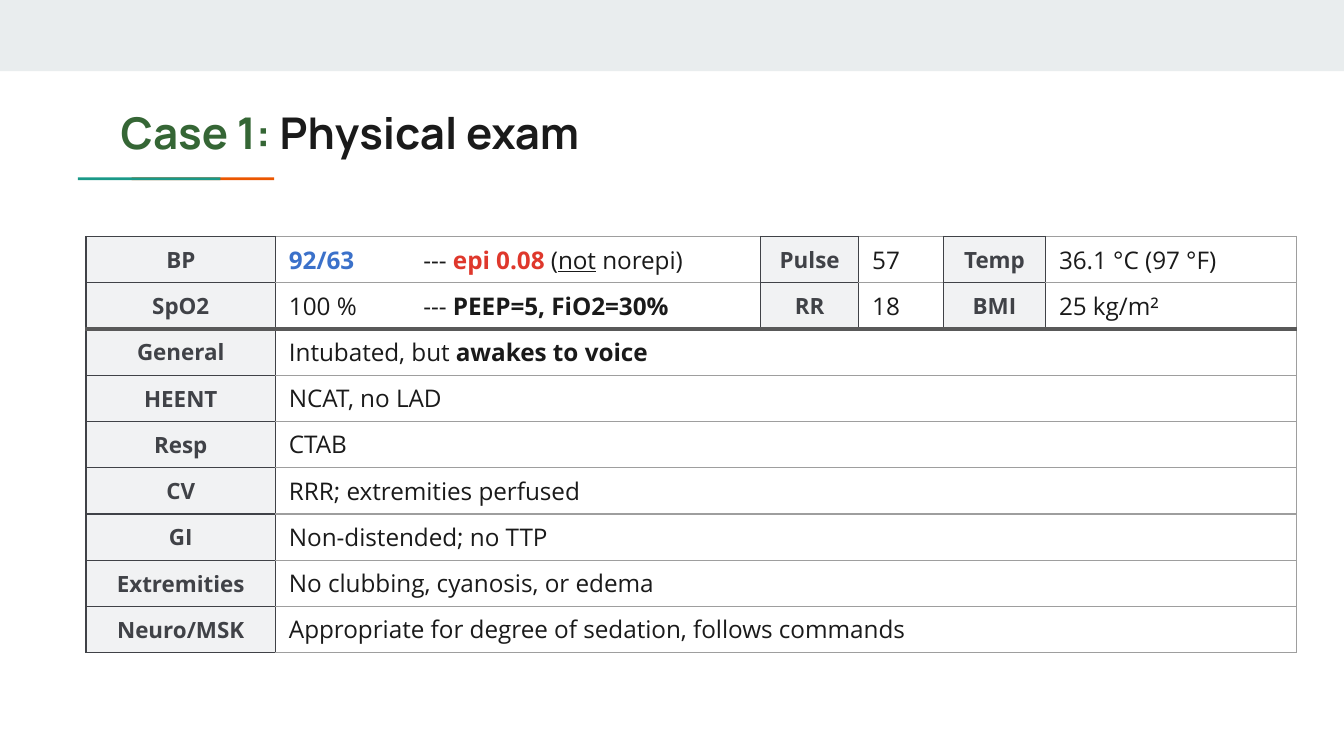
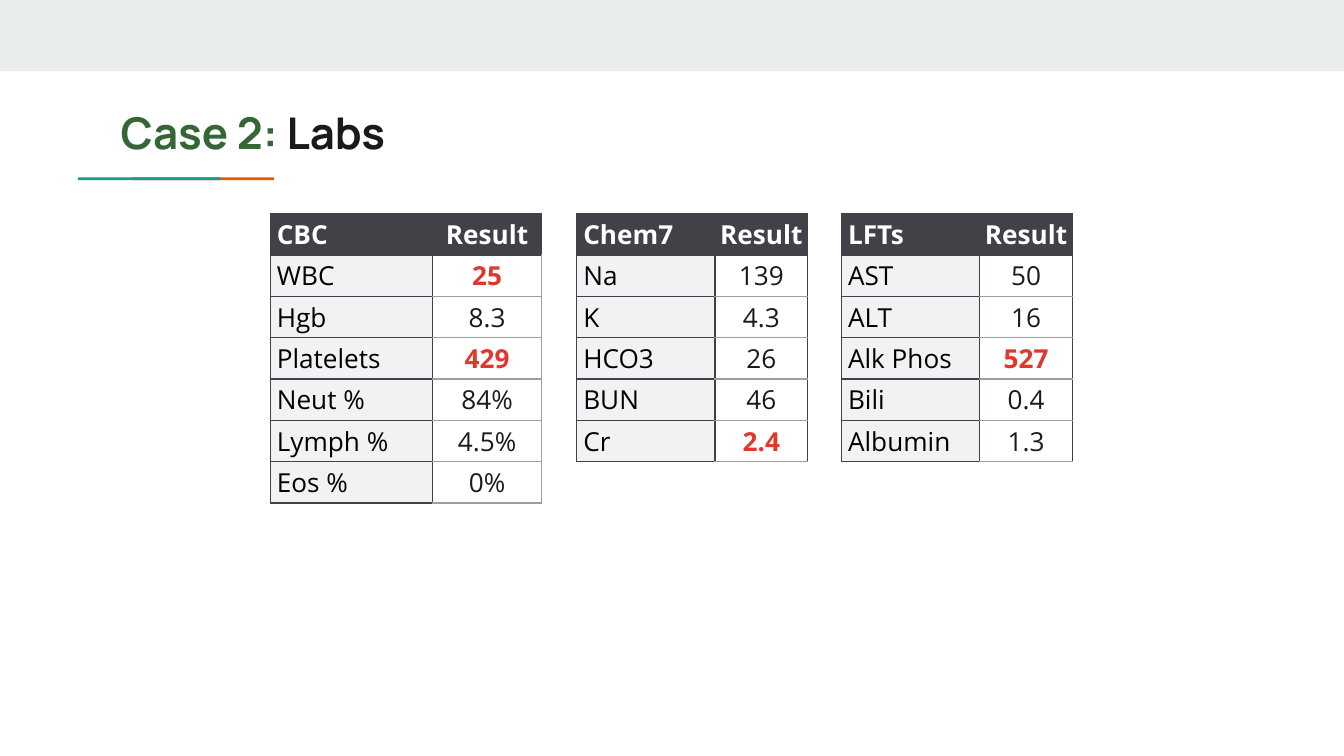
from dataclasses import dataclass

from lxml.etree import SubElement
from pptx import Presentation
from pptx.dml.color import RGBColor
from pptx.enum.shapes import MSO_SHAPE
from pptx.enum.text import MSO_ANCHOR, PP_ALIGN
from pptx.oxml.ns import qn
from pptx.util import Inches, Pt


@dataclass(frozen=True)
class Theme:
    band: str = "E9EDEE"
    orange: str = "EB5600"
    teal: str = "1A9988"
    green: str = "356635"
    ink: str = "1A1A1A"
    black: str = "000000"
    white: str = "FFFFFF"
    slate: str = "404247"
    label: str = "F1F2F3"
    grey: str = "9E9E9E"
    divider: str = "595959"
    red: str = "DF382C"
    blue: str = "3B71CA"
    heading_font: str = "Manrope"
    body_font: str = "Open Sans"
    title_size: float = 23.4
    label_size: float = 12
    exam_size: float = 13
    lab_size: float = 14
    hairline: float = 0.75
    header_rule: float = 1.5
    divider_rule: float = 2.25


THEME = Theme()
SLIDE_W = 10
SLIDE_H = SLIDE_W * 9 / 16
EXAM_ROW = Pt(24.8)
LAB_ROW = Pt(22.15)

STYLES = {
    "plain": (THEME.ink, {}),
    "bold": (THEME.ink, {"bold": True}),
    "underline": (THEME.ink, {"underline": True}),
    "low": (THEME.blue, {"bold": True}),
    "alert": (THEME.red, {"bold": True}),
    "label": (THEME.slate, {"bold": True}),
    "header": (THEME.white, {"bold": True}),
    "analyte": (THEME.black, {}),
    "case": (THEME.green, {"bold": True}),
}

EXAM_COLUMNS = (1.41, 3.61, 0.73, 0.63, 0.76, 1.87)
VITALS = [
    ("BP", [("92/63 ", "low"), ("\t--- ", "plain"), ("epi 0.08", "alert"),
            (" (", "plain"), ("not", "underline"), (" norepi)", "plain")],
     "Pulse", "57", "Temp", "36.1 °C (97 °F)"),
    ("SpO2", [("100 % \t--- ", "plain"), ("PEEP=5, FiO2=30%", "bold")],
     "RR", "18", "BMI", "25 kg/m²"),
]
FINDINGS = [
    ("General", [("Intubated, but ", "plain"), ("awakes to voice", "bold")]),
    ("HEENT", "NCAT, no LAD"),
    ("Resp", "CTAB"),
    ("CV", "RRR; extremities perfused"),
    ("GI", "Non-distended; no TTP"),
    ("Extremities", "No clubbing, cyanosis, or edema"),
    ("Neuro/MSK", "Appropriate for degree of sedation, follows commands"),
]

LAB_PANELS = [
    {"name": "CBC", "left": 2.01, "columns": (1.21, 0.81), "edge": THEME.grey,
     "abnormal": ("WBC", "Platelets"),
     "results": [("WBC", "25"), ("Hgb", "8.3"), ("Platelets", "429"),
                 ("Neut %", "84%"), ("Lymph %", "4.5%"), ("Eos %", "0%")]},
    {"name": "Chem7", "left": 4.29, "columns": (1.03, 0.69), "edge": THEME.slate,
     "abnormal": ("Cr",),
     "results": [("Na", "139"), ("K", "4.3"), ("HCO3", "26"),
                 ("BUN", "46"), ("Cr", "2.4")]},
    {"name": "LFTs", "left": 6.26, "columns": (1.03, 0.69), "edge": THEME.slate,
     "abnormal": ("Alk Phos",),
     "results": [("AST", "50"), ("ALT", "16"), ("Alk Phos", "527"),
                 ("Bili", "0.4"), ("Albumin", "1.3")]},
]


def apply(target, values):
    for name, value in values.items():
        setattr(target, name, value)


def write(paragraph, pieces, font, size):
    for text, style in pieces:
        run = paragraph.add_run()
        run.text = text
        color, emphasis = STYLES[style]
        apply(run.font, {"name": font, "size": Pt(size), "bold": False, **emphasis})
        run.font.color.rgb = RGBColor.from_string(color)


def add_bar(slide, left, top, width, height, color):
    bar = slide.shapes.add_shape(MSO_SHAPE.RECTANGLE, *map(Inches, (left, top, width, height)))
    bar.shadow.inherit = False
    bar.fill.solid()
    bar.fill.fore_color.rgb = RGBColor.from_string(color)
    bar.line.fill.background()


def start_slide(deck, case, topic):
    slide = deck.slides.add_slide(deck.slide_layouts[6])
    add_bar(slide, 0, 0, SLIDE_W, 0.53, THEME.band)
    for left, color in ((0.98, THEME.orange), (0.58, THEME.teal)):
        add_bar(slide, left, 1.32, 1.06, 0.02, color)
    title = slide.shapes.add_textbox(*map(Inches, (0.8, 0.69, 8.41, 0.59))).text_frame
    apply(title, {"word_wrap": True, "vertical_anchor": MSO_ANCHOR.TOP,
                  **{f"margin_{side}": Inches(0.1) for side in ("left", "top", "right", "bottom")}})
    write(title.paragraphs[0], [(case, "case"), (f" {topic}", "bold")],
          THEME.heading_font, THEME.title_size)
    return slide


def add_grid(slide, left, top, columns, row_count, row_height):
    frame = slide.shapes.add_table(row_count, len(columns), Inches(left), Inches(top),
                                   Inches(sum(columns)), row_height * row_count)
    grid = frame.table
    apply(grid, {"first_row": False, "horz_banding": False})
    for column, width in zip(grid.columns, columns):
        column.width = Inches(width)
    for row in grid.rows:
        row.height = row_height
    return grid


def dress(cell, borders, fill, margins, anchor):
    props = cell._tc.get_or_add_tcPr()
    for side, (color, width) in zip("LRTB", borders):
        line = SubElement(props, qn(f"a:ln{side}"), w=str(Pt(width)))
        SubElement(SubElement(line, qn("a:solidFill")), qn("a:srgbClr"), val=color)
    if fill:
        cell.fill.solid()
        cell.fill.fore_color.rgb = RGBColor.from_string(fill)
    else:
        cell.fill.background()
    sides = ("margin_left", "margin_top", "margin_right", "margin_bottom")
    apply(cell, {**dict(zip(sides, map(Inches, margins))), "vertical_anchor": anchor})


DARK = (THEME.slate, THEME.hairline)
LIGHT = (THEME.grey, THEME.hairline)
DIVIDER = (THEME.divider, THEME.divider_rule)
HEADER_RULE = (THEME.slate, THEME.header_rule)


def add_exam(slide):
    rows = VITALS + FINDINGS
    last = len(EXAM_COLUMNS) - 1
    grid = add_grid(slide, 0.64, 1.76, EXAM_COLUMNS, len(rows), EXAM_ROW)
    for r, entries in enumerate(rows):
        if len(entries) == 2:
            grid.cell(r, 1).merge(grid.cell(r, last))
        for c in range(last + 1):
            cell = grid.cell(r, c)
            is_label = c % 2 == 0 and c < len(entries)
            rule = DARK if is_label else LIGHT
            right = DARK if is_label or (len(entries) > 2 and c < last) else LIGHT
            borders = (DARK, right,
                       DIVIDER if r == len(VITALS) else rule,
                       DIVIDER if r == len(VITALS) - 1 else rule)
            dress(cell, borders, THEME.label if is_label else None, (0.1, 0.05, 0.1, 0.05),
                  MSO_ANCHOR.MIDDLE if is_label else MSO_ANCHOR.TOP)
            if c >= len(entries):
                continue
            entry = entries[c]
            pieces = [(entry, "label" if is_label else "plain")] if isinstance(entry, str) else entry
            paragraph = cell.text_frame.paragraphs[0]
            apply(paragraph, {"alignment": PP_ALIGN.CENTER} if is_label else {"space_after": Pt(12)})
            write(paragraph, pieces, THEME.body_font,
                  THEME.label_size if is_label else THEME.exam_size)


def add_panel(slide, panel):
    rows = [(panel["name"], "Result")] + panel["results"]
    grid = add_grid(slide, panel["left"], 1.59, panel["columns"], len(rows), LAB_ROW)
    for r, entries in enumerate(rows):
        for c, text in enumerate(entries):
            cell = grid.cell(r, c)
            if r == 0:
                style, fill, borders = "header", THEME.slate, (DARK, DARK, DARK, HEADER_RULE)
            else:
                rule = LIGHT if c else DARK
                edge = (panel["edge"], THEME.hairline) if c else DARK
                borders = (DARK, edge, HEADER_RULE if r == 1 else rule, rule)
                result_style = "alert" if entries[0] in panel["abnormal"] else "plain"
                style, fill = (result_style, None) if c else ("analyte", THEME.label)
            dress(cell, borders, fill, (0 if c else 0.05, 0, 0, 0), MSO_ANCHOR.MIDDLE)
            paragraph = cell.text_frame.paragraphs[0]
            paragraph.alignment = PP_ALIGN.CENTER if c else PP_ALIGN.LEFT
            write(paragraph, [(text, style)], THEME.body_font, THEME.lab_size)


def main():
    deck = Presentation()
    apply(deck, {"slide_width": Inches(SLIDE_W), "slide_height": Inches(SLIDE_H)})
    add_exam(start_slide(deck, "Case 1:", "Physical exam"))
    labs = start_slide(deck, "Case 2:", "Labs")
    for panel in LAB_PANELS:
        add_panel(labs, panel)
    deck.save("out.pptx")


if __name__ == "__main__":
    main()
